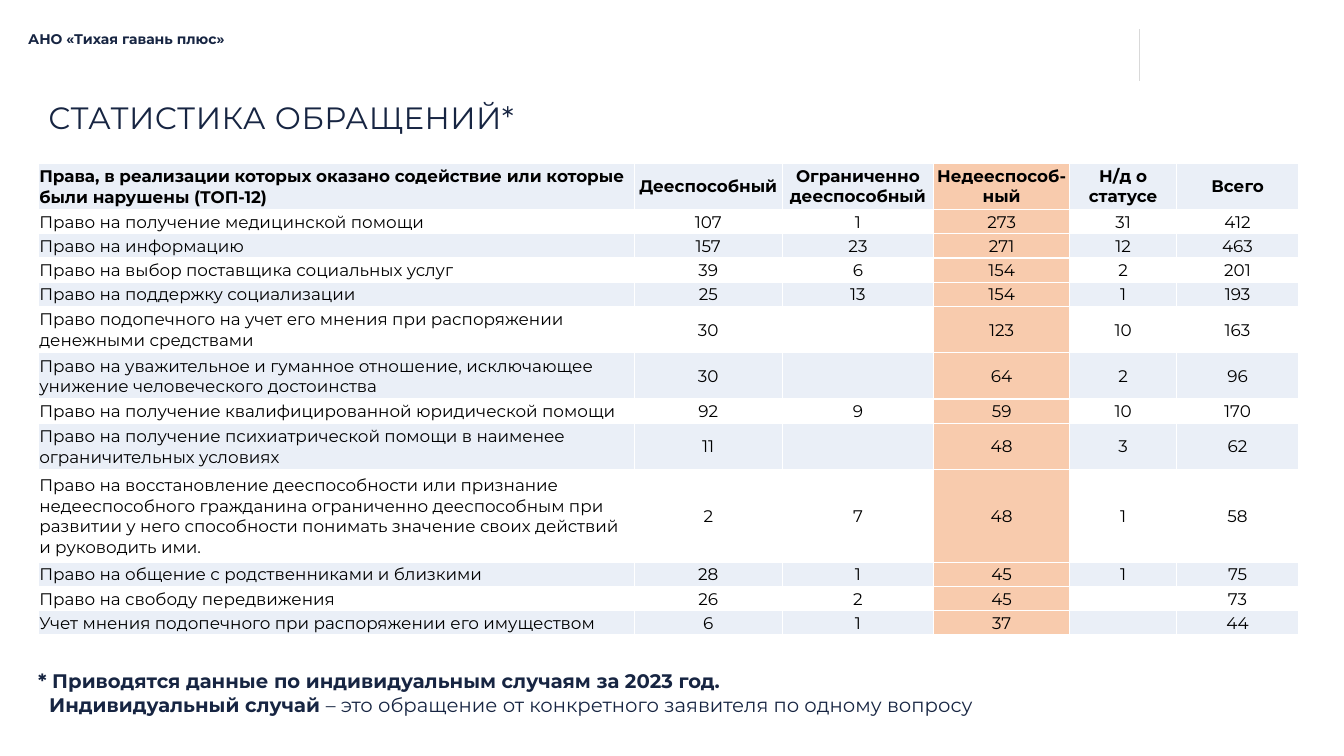
from lxml.etree import SubElement
from pptx import Presentation
from pptx.dml.color import RGBColor
from pptx.enum.shapes import MSO_CONNECTOR
from pptx.enum.text import MSO_ANCHOR, PP_ALIGN
from pptx.oxml import parse_xml
from pptx.oxml.ns import nsdecls, qn
from pptx.util import Inches, Pt

COLORS = {"navy": "172542", "black": "000000", "band": "EAEFF7",
          "accent": "F8CBAD", "rule": "D9D9D9", "border": "FFFFFF"}
FONT = "Montserrat"
W, H = Inches(13.33), Inches(7.5)
MARGIN, TABLE_LEFT = Inches(0.28), Inches(0.38)
COLS = [5.91, 1.47, 1.5, 1.35, 1.06, 1.21]
ROW_HEIGHTS = {1: 0.24, 2: 0.46, 4: 0.92}
ACCENT_COL = 3

HEADER = ["Права, в реализации которых оказано содействие или которые были нарушены (ТОП-12)",
          "Дееспособный", "Ограниченно дееспособный", "Недееспособ-ный", "Н/д о статусе", "Всего"]
RIGHTS = [
    (1, "Право на получение медицинской помощи", 107, 1, 273, 31, 412),
    (1, "Право на информацию", 157, 23, 271, 12, 463),
    (1, "Право на выбор поставщика социальных услуг", 39, 6, 154, 2, 201),
    (1, "Право на поддержку социализации", 25, 13, 154, 1, 193),
    (2, "Право подопечного на учет его мнения при распоряжении денежными средствами",
     30, "", 123, 10, 163),
    (2, "Право на уважительное и гуманное отношение, исключающее унижение "
        "человеческого достоинства", 30, "", 64, 2, 96),
    (1, "Право на получение квалифицированной юридической помощи", 92, 9, 59, 10, 170),
    (2, "Право на получение психиатрической помощи в наименее ограничительных условиях",
     11, "", 48, 3, 62),
    (4, "Право на восстановление дееспособности или признание недееспособного гражданина "
        "ограниченно дееспособным при развитии у него способности понимать значение своих "
        "действий и руководить ими.", 2, 7, 48, 1, 58),
    (1, "Право на общение с родственниками и близкими", 28, 1, 45, 1, 75),
    (1, "Право на свободу передвижения", 26, 2, 45, "", 73),
    (1, "Учет мнения подопечного при распоряжении его имуществом", 6, 1, 37, "", 44),
]


def rgb(name):
    return RGBColor.from_string(COLORS[name])


def set_font(p, size, color, bold=None):
    p.font.name, p.font.size, p.font.bold = FONT, Pt(size), bold
    p.font.color.rgb = rgb(color)


def add_title(s, text):
    sp = s.shapes.title
    sp.left, sp.top, sp.width, sp.height = TABLE_LEFT, Inches(0.91), Inches(11.5), Inches(0.5)
    tf = sp.text_frame
    tf.vertical_anchor = MSO_ANCHOR.MIDDLE
    p = tf.paragraphs[0]
    p.alignment = PP_ALIGN.LEFT
    set_font(p, 22, "navy")
    r = p.add_run()
    r.text = text
    r._r.get_or_add_rPr().set("spc", "40")


def add_text(s, top, width, height, size, paragraphs, inset=None):
    """Add a text box; each paragraph is an indent and (text, bold) runs."""
    tf = s.shapes.add_textbox(MARGIN, top, width, height).text_frame
    tf.word_wrap = True
    if inset is not None:
        tf.margin_left = tf.margin_right = tf.margin_bottom = inset
        tf.margin_top = inset + Inches(0.01)
    for i, (indent, runs) in enumerate(paragraphs):
        p = tf.add_paragraph() if i else tf.paragraphs[0]
        set_font(p, size, "navy", all(bold for _, bold in runs))
        if indent:
            p._p.get_or_add_pPr().set("marL", str(indent))
        for text, bold in runs:
            r = p.add_run()
            r.text = text
            if len(runs) > 1:
                r.font.bold = bold


def add_rule(s, x, top, bottom):
    ln = s.shapes.add_connector(MSO_CONNECTOR.STRAIGHT, x, top, x, bottom)
    ln.line.color.rgb, ln.line.width = rgb("rule"), Pt(0.5)
    SubElement(ln._element.spPr, qn("a:effectLst"))


def add_borders(cell):
    tcPr = cell._tc.get_or_add_tcPr()
    for i, side in enumerate("LRTB"):
        tcPr.insert(i, parse_xml(
            f'<a:ln{side} {nsdecls("a")} w="12700"><a:solidFill>'
            f'<a:srgbClr val="{COLORS["border"]}"/></a:solidFill></a:ln{side}>'))


def fill_cell(cell, value, row, col):
    inset = Inches(0.01) if row or not col else 0
    cell.margin_left = cell.margin_right = cell.margin_top = inset
    cell.margin_bottom = 0
    cell.vertical_anchor = MSO_ANCHOR.MIDDLE
    if col == ACCENT_COL or row % 2 == 0:
        cell.fill.solid()
        cell.fill.fore_color.rgb = rgb("accent" if col == ACCENT_COL else "band")
    else:
        cell.fill.background()
    add_borders(cell)
    p = cell.text_frame.paragraphs[0]
    p.alignment = PP_ALIGN.CENTER if col else PP_ALIGN.LEFT
    set_font(p, 12, "black", row == 0)
    if value == "":
        p._p.get_or_add_endParaRPr().set("sz", "1200")
    else:
        p.add_run().text = str(value)


def add_rights_table(s):
    rows = [(2, *HEADER), *RIGHTS]
    heights = [Inches(ROW_HEIGHTS[lines]) for lines, *_ in rows]
    tbl = s.shapes.add_table(len(rows), len(COLS), TABLE_LEFT, Inches(1.62),
                             Inches(sum(COLS)), sum(heights)).table
    tbl.first_row = tbl.horz_banding = False
    for col, width in enumerate(COLS):
        tbl.columns[col].width = Inches(width)
    for row, (_, *values) in enumerate(rows):
        tbl.rows[row].height = heights[row]
        for col, value in enumerate(values):
            fill_cell(tbl.cell(row, col), value, row, col)


def main():
    prs = Presentation()
    prs.slide_width, prs.slide_height = W, H
    s = prs.slides.add_slide(prs.slide_layouts[5])
    add_title(s, "СТАТИСТИКА ОБРАЩЕНИЙ*")
    add_text(s, Inches(0.29), Inches(3.67), Inches(0.18), 10,
             [(0, [("АНО «Тихая гавань плюс»", True)])], inset=0)
    add_text(s, Inches(6.59), Inches(9.56), Inches(0.54), 14, [
        (0, [("* Приводятся данные по индивидуальным случаям за 2023 год.", True)]),
        (Inches(0.11), [("Индивидуальный случай ", True),
                        ("– это обращение от конкретного заявителя по одному вопросу", False)]),
    ])
    add_rule(s, Inches(11.3), Inches(0.29), Inches(0.8))
    add_rights_table(s)
    prs.save("out.pptx")


if __name__ == "__main__":
    main()
